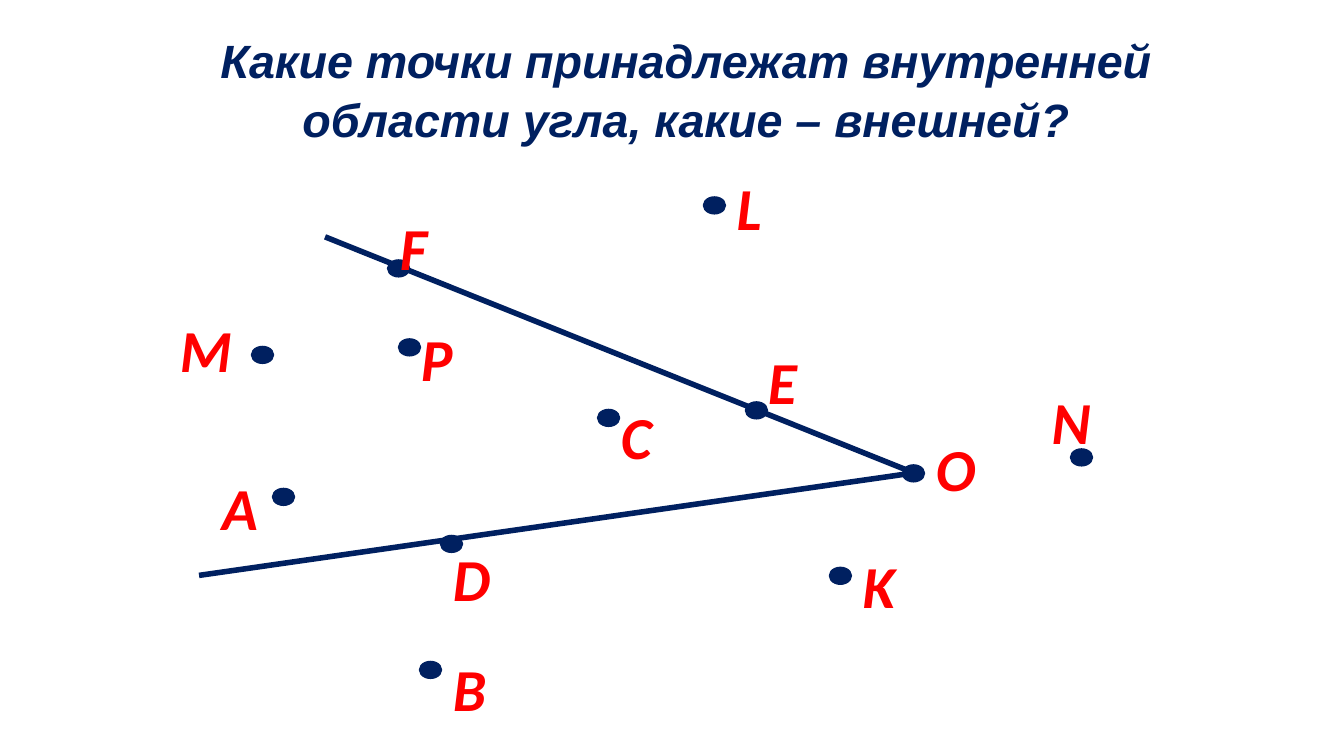
import pptx
import pptx.util
import pptx.dml.color
import pptx.enum.shapes
import pptx.enum.text
import pptx.oxml.ns
import lxml.etree

Inches = pptx.util.Inches
COLORS = {"navy": "002060", "red": "FF0000"}

# Point name: left and top of its dot, then left and top of its label
POINTS = {
    "O": (10.75, 5.54, 11, 5.07),
    "M": (3, 4.13, 2, 3.66),
    "P": (4.75, 4.04, 4.87, 3.76),
    "C": (7.12, 4.88, 7.25, 4.69),
    "A": (3.25, 5.82, 2.5, 5.54),
    "D": (5.25, 6.38, 5.25, 6.38),
    "F": (4.62, 3.1, 4.62, 2.44),
    "E": (8.88, 4.79, 9, 4.04),
    "N": (12.75, 5.35, 12.38, 4.51),
    "L": (8.38, 2.35, 8.63, 1.97),
    "B": (5, 7.88, 5.25, 7.69),
    "K": (9.88, 6.76, 10.13, 6.47),
}
VERTEX = (10.88, 5.63)
RAY_ENDS = [(3.87, 2.82), (2.37, 6.85)]


class AngleSlide:
    def __init__(self, page):
        self.page = page

    def color(self, name):
        return pptx.dml.color.RGBColor.from_string(COLORS[name])

    def ray(self, start, end):
        line = self.page.shapes.add_connector(
            pptx.enum.shapes.MSO_CONNECTOR.STRAIGHT,
            *(Inches(value) for value in start + end))
        line.line.color.rgb = self.color("navy")
        line.line.width = pptx.util.Pt(4.75)
        lxml.etree.SubElement(line._element.spPr, pptx.oxml.ns.qn("a:effectLst"))

    def dot(self, left, top):
        dot = self.page.shapes.add_shape(
            pptx.enum.shapes.MSO_SHAPE.OVAL,
            Inches(left), Inches(top), Inches(0.25), Inches(0.19))
        dot.shadow.inherit = False
        dot.fill.solid()
        dot.fill.fore_color.rgb = self.color("navy")
        dot.line.color.rgb = self.color("navy")
        dot.line.width = pptx.util.Pt(2)

    def text(self, words, left, top, width, height, size, font, color):
        box = self.page.shapes.add_textbox(
            Inches(left), Inches(top), Inches(width), Inches(height))
        frame = box.text_frame
        frame.word_wrap = True
        frame.margin_left = frame.margin_right = Inches(0.14)
        frame.margin_top = frame.margin_bottom = Inches(0.07)
        frame.text = words
        para = frame.paragraphs[0]
        span = para.runs[0]
        span.font.size = pptx.util.Pt(size)
        span.font.name = font
        span.font.bold = span.font.italic = True
        span.font.color.rgb = self.color(color)
        return box

    def title(self, words):
        box = self.text(words, 2.33, 0.28, 11.67, 1.39, 40, "Arial", "navy")
        para = box.text_frame.paragraphs[0]
        para.alignment = pptx.enum.text.PP_ALIGN.CENTER
        para.line_spacing = 1.05

    def label(self, name, left, top):
        box = self.text(name, left, top, 2.75, 1, 51, "Calibri", "red")
        box.text_frame.auto_size = pptx.enum.text.MSO_AUTO_SIZE.SHAPE_TO_FIT_TEXT


def main():
    deck = pptx.Presentation()
    deck.slide_width, deck.slide_height = Inches(16), Inches(9)
    slide = AngleSlide(deck.slides.add_slide(deck.slide_layouts[6]))

    # Sides of the angle
    for end in RAY_ENDS:
        slide.ray(VERTEX, end)

    # Dots, then their labels on top
    for dot_left, dot_top, _, _ in POINTS.values():
        slide.dot(dot_left, dot_top)
    for name, (_, _, label_left, label_top) in POINTS.items():
        slide.label(name, label_left, label_top)

    # Question
    slide.title("Какие точки принадлежат внутренней области угла, какие – внешней?")

    deck.save("out.pptx")


if __name__ == "__main__":
    main()
